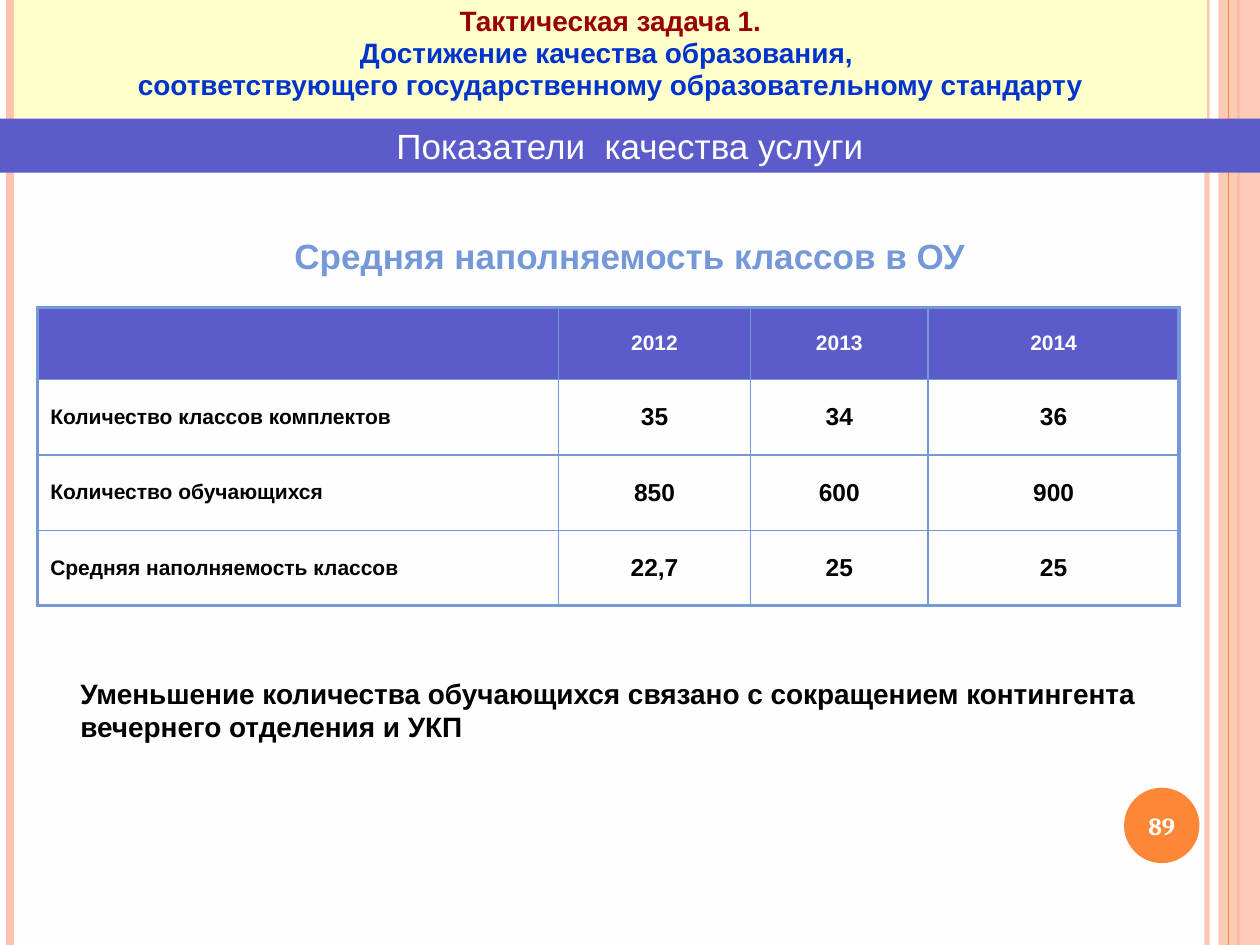
from lxml.etree import SubElement
from pptx import Presentation
from pptx.dml.color import RGBColor
from pptx.enum.shapes import MSO_CONNECTOR, MSO_SHAPE
from pptx.enum.text import MSO_ANCHOR, PP_ALIGN
from pptx.oxml.ns import qn
from pptx.util import Cm, Pt

COLORS = {
    "paper": "FFFEFF", "peach": "FEC3AE", "orange": "FE8637", "violet": "5B5BC9",
    "sky": "7598D9", "cream": "FFFFCC", "maroon": "990000", "blue": "0033CC",
    "black": "000000", "white": "FFFFFF",
}
WIDTH, HEIGHT = 25.4, 19.05
YEARS = ["", "2012", "2013", "2014"]
ROWS = [
    ["Количество классов комплектов", "35", "34", "36"],
    ["Количество обучающихся", "850", "600", "900"],
    ["Средняя наполняемость классов", "22,7", "25", "25"],
]


def color(name):
    """Return the named colour."""
    return RGBColor.from_string(COLORS[name])


def lengths(box):
    """Turn a box in centimetres into lengths."""
    return [Cm(value) for value in box]


def set_alpha(fill_parent, percent):
    """Set the opacity of the solid fill under an element."""
    tint = fill_parent.find(qn("a:solidFill"))[0]
    SubElement(tint, qn("a:alpha"), val=str(percent * 1000))


def style(para, size, name, bold=True, align=PP_ALIGN.CENTER, font="Arial"):
    """Format a whole paragraph."""
    para.alignment = align
    para.font.size = Pt(size)
    para.font.bold = bold
    para.font.name = font
    para.font.color.rgb = color(name)


def add_stripe(page, x, name, width, opacity=100):
    """Draw a vertical line over the whole page height."""
    line = page.shapes.add_connector(
        MSO_CONNECTOR.STRAIGHT, Cm(x), 0, Cm(x), Cm(HEIGHT))
    line.line.color.rgb = color(name)
    line.line.width = Pt(width)
    properties = line.element.spPr
    if opacity < 100:
        set_alpha(properties.find(qn("a:ln")), opacity)
    SubElement(properties, qn("a:effectLst"))


def add_block(page, kind, box, name):
    """Add a plain filled shape."""
    block = page.shapes.add_shape(kind, *lengths(box))
    block.shadow.inherit = False
    block.fill.solid()
    block.fill.fore_color.rgb = color(name)
    block.line.fill.background()
    return block


def add_text(page, box, text, size, name, anchor=MSO_ANCHOR.TOP, **looks):
    """Add a wrapped text box with one paragraph."""
    frame = page.shapes.add_textbox(*lengths(box)).text_frame
    frame.word_wrap = True
    frame.vertical_anchor = anchor
    frame.text = text
    style(frame.paragraphs[0], size, name, **looks)


def add_frame(page, right):
    """Draw the decorative edges, the right ones measured from a given x."""
    add_stripe(page, right, "peach", 3, 93)
    add_stripe(page, 0.2, "peach", 4.5)
    add_stripe(page, right + 0.64, "orange", 1.5)
    side = right + 0.23
    panel = add_block(page, MSO_SHAPE.RECTANGLE, (side, 0, WIDTH - side, HEIGHT), "peach")
    set_alpha(panel.element.spPr, 87)
    add_stripe(page, right + 0.44, "orange", 0.75)


def add_page_number(page, box, number):
    """Draw the round badge with the page number."""
    left, top, width, height = box
    add_block(page, MSO_SHAPE.OVAL, box, "orange")
    add_text(page, (left - 0.08, top + 0.04, width + 0.16, height - 0.08),
             number, 14, "white", MSO_ANCHOR.MIDDLE, font="Cambria")


def set_borders(cell, widths):
    """Give a cell its left, right, top and bottom borders."""
    properties = cell._tc.get_or_add_tcPr()
    for side, width in zip("LRTB", widths):
        line = SubElement(properties, qn(f"a:ln{side}"), w=str(Pt(width)))
        fill = SubElement(line, qn("a:solidFill"))
        SubElement(fill, qn("a:srgbClr"), val=COLORS["sky"])


def add_class_table(page, box):
    """Add the table of class sizes by year."""
    data = [YEARS] + ROWS
    last_row, last_column = len(data) - 1, len(YEARS) - 1
    table = page.shapes.add_table(len(data), len(YEARS), *lengths(box)).table
    for column, width in zip(table.columns, (10.5, 3.87, 3.58, 5.06)):
        column.width = Cm(width)
    for r, row in enumerate(data):
        table.rows[r].height = Cm(1.52 if r else 1.45)
        for c, text in enumerate(row):
            cell = table.cell(r, c)
            outer = (c == 0, c == last_column, r == 0, r == last_row)
            set_borders(cell, [2.25 if edge else 1 for edge in outer])
            cell.fill.solid()
            cell.fill.fore_color.rgb = color("paper" if r else "violet")
            cell.vertical_anchor = MSO_ANCHOR.MIDDLE
            cell.text = text
            style(cell.text_frame.paragraphs[0], 14 if r and c else 12,
                  "black" if r else "paper",
                  align=PP_ALIGN.CENTER if c else PP_ALIGN.LEFT)


def place_title(page, box):
    """Move the title placeholder to the front and fill it."""
    title = page.shapes.title
    title.element.getparent().append(title.element)
    title.left, title.top, title.width, title.height = lengths(box)
    title.fill.solid()
    title.fill.fore_color.rgb = color("cream")
    frame = title.text_frame
    frame.vertical_anchor = MSO_ANCHOR.TOP
    frame.text = ("Тактическая задача 1.\nДостижение качества образования, \v"
                  "соответствующего государственному образовательному стандарту")
    for para, name in zip(frame.paragraphs, ("maroon", "blue")):
        style(para, 16, name)
        para.line_spacing = 0.95
        para.space_before = Pt(0)


def add_band(page, box, text):
    """Add the full-width band with the subtitle."""
    frame = add_block(page, MSO_SHAPE.RECTANGLE, box, "violet").text_frame
    frame.vertical_anchor = MSO_ANCHOR.MIDDLE
    frame.text = text
    style(frame.paragraphs[0], 20, "paper", bold=False)


def main():
    """Build and save the deck."""
    deck = Presentation()
    deck.slide_width, deck.slide_height = Cm(WIDTH), Cm(HEIGHT)
    page = deck.slides.add_slide(deck.slide_layouts[5])
    page.background.fill.solid()
    page.background.fill.fore_color.rgb = color("paper")
    add_frame(page, 24.33)
    add_class_table(page, (0.76, 6.2, 23.01, 6.01))
    add_page_number(page, (22.66, 15.88, 1.52, 1.52), "89")
    add_text(page, (0, 4.6, WIDTH, 1.12), "Средняя наполняемость классов в ОУ", 20, "sky")
    add_text(page, (1.37, 13.51, 22.2, 2.08),
             "Уменьшение количества обучающихся связано с сокращением "
             "контингента вечернего отделения и УКП",
             16, "black", align=PP_ALIGN.LEFT)
    place_title(page, (0.28, 0, 24.05, 2.39))
    add_band(page, (0, 2.39, WIDTH, 1.09), "Показатели  качества услуги")
    deck.save("out.pptx")


if __name__ == "__main__":
    main()
